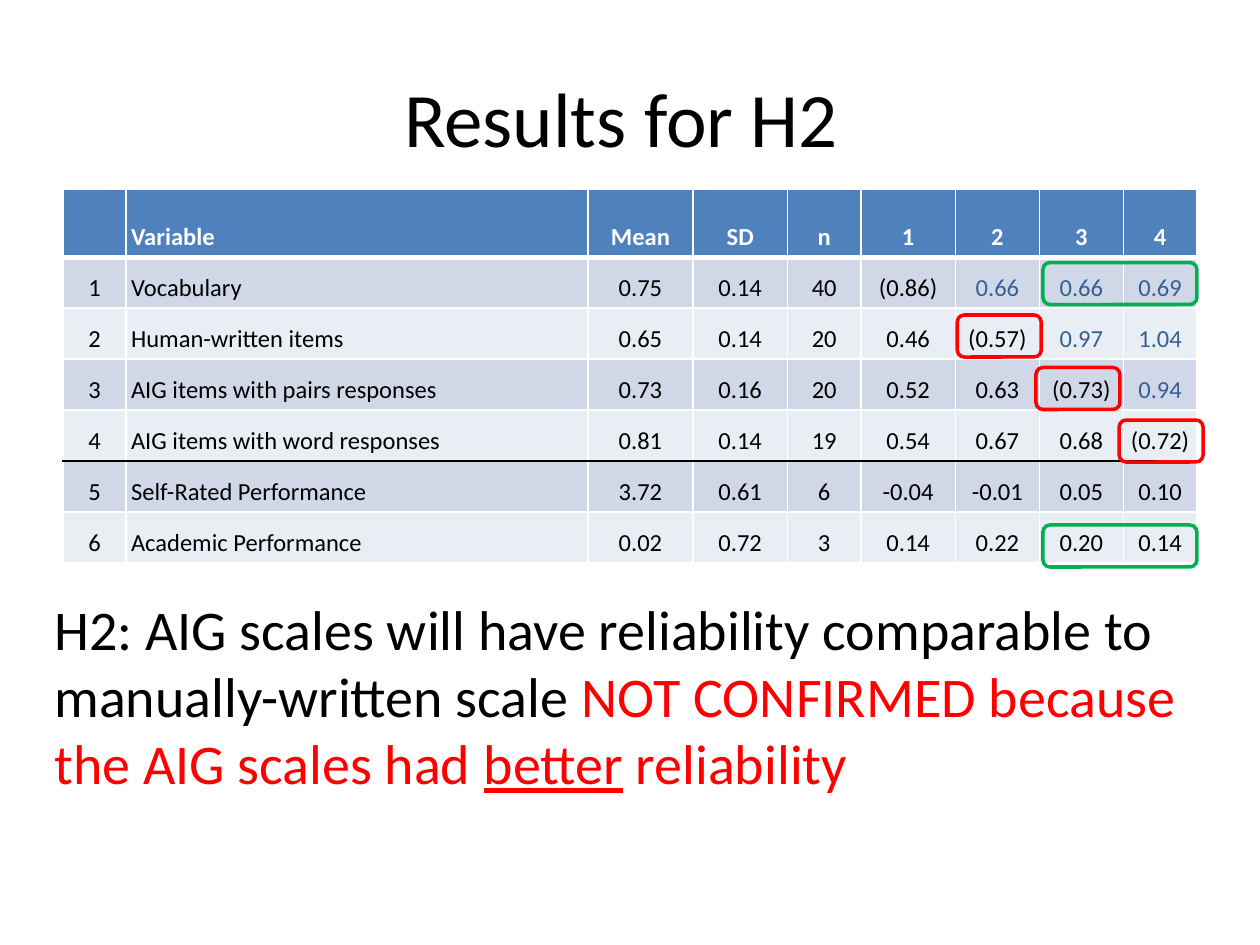
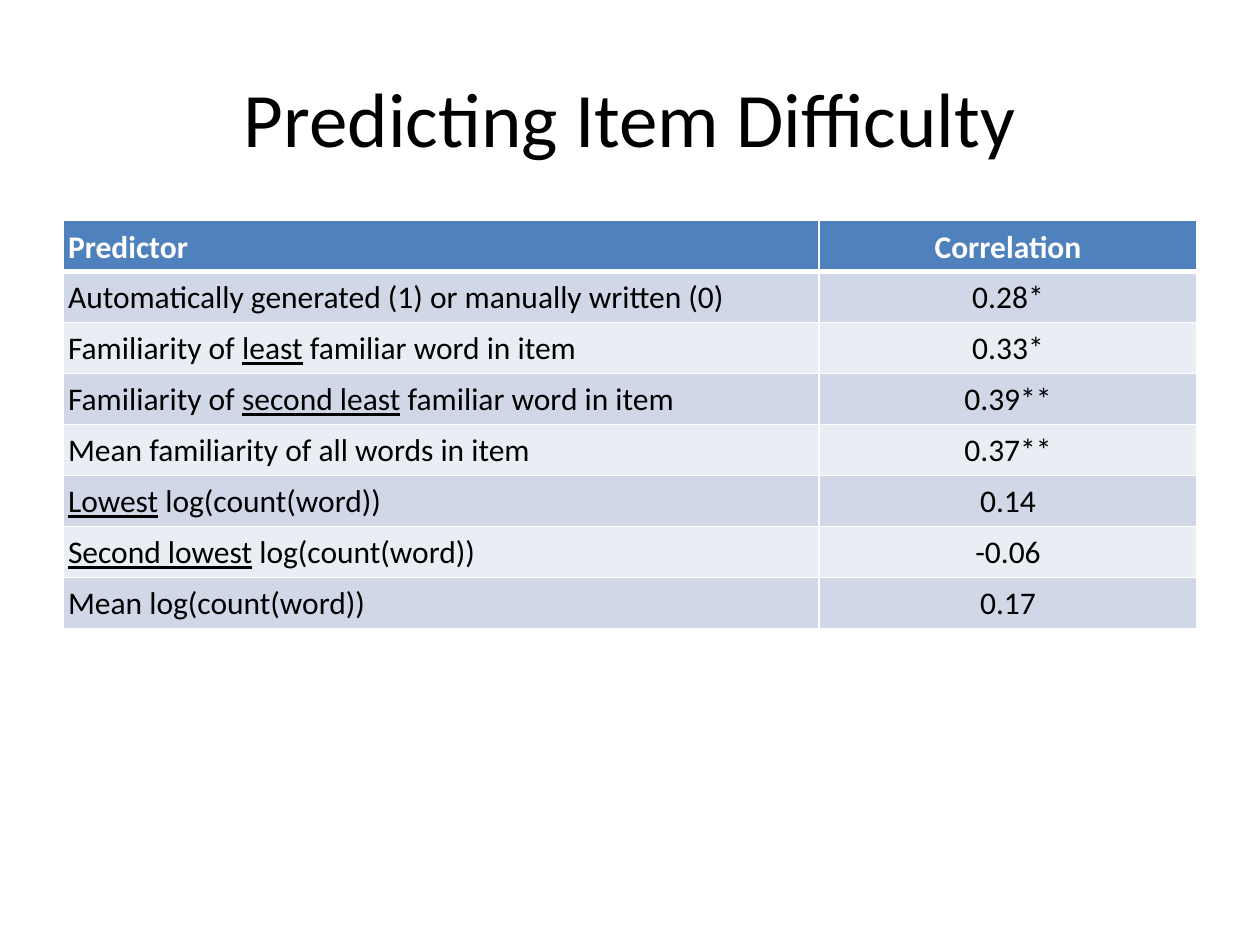
import lxml.etree
import pptx
import pptx.dml.color
import pptx.enum.shapes
import pptx.enum.text
import pptx.oxml.ns
import pptx.util

Pt = pptx.util.Pt
ALIGN = pptx.enum.text.PP_ALIGN
ANCHOR = pptx.enum.text.MSO_ANCHOR

BLACK, WHITE, RED, GREEN = "000000", "FFFFFF", "FF0000", "00B050"
HEADER, BANDS, UPPER_BLUE = "4F81BD", ("E9EDF4", "D0D8E8"), "376092"
FONT = "Calibri"
TABLE_LEFT = 36
ROW_HEIGHT = 29.16


def rgb(colour):
    return pptx.dml.color.RGBColor.from_string(colour)


def set_borders(cell, **sides):
    """Draw cell edges given as L, R, T, B = (colour, width in points)."""
    qn = pptx.oxml.ns.qn
    properties = cell._tc.get_or_add_tcPr()
    for position, side in enumerate("LRTB"):
        colour, width = sides[side]
        line = lxml.etree.Element(qn(f"a:ln{side}"), w=str(Pt(width)))
        fill = lxml.etree.SubElement(line, qn("a:solidFill"))
        lxml.etree.SubElement(fill, qn("a:srgbClr"), val=colour)
        properties.insert(position, line)


class Slides:
    def __init__(self):
        self.deck = pptx.Presentation()
        self.deck.slide_width, self.deck.slide_height = Pt(720), Pt(540)
        self.page = None

    def add_page(self, title):
        self.page = self.deck.slides.add_slide(self.deck.slide_layouts[5])
        box = self.page.shapes.title
        box.left, box.top, box.width, box.height = Pt(36), Pt(21.6), Pt(648), Pt(90)
        box.text_frame.vertical_anchor = ANCHOR.MIDDLE
        self.fill_text(box.text_frame, title, 44, align=ALIGN.CENTER)

    def fill_text(self, frame, content, size, colour=BLACK, bold=False, align=ALIGN.LEFT):
        """Fill a frame with a string or with (text, colour, underline) spans."""
        para = frame.paragraphs[0]
        para.alignment = align
        font = para.font
        font.name, font.size, font.bold = FONT, Pt(size), bold
        font.color.rgb = rgb(colour)
        spans = [(content, None, False)] if isinstance(content, str) else content
        for text, span_colour, underline in spans:
            span = para.add_run()
            span.text = text
            if span_colour:
                span.font.color.rgb = rgb(span_colour)
            if underline:
                span.font.underline = True
        return para

    def text(self, left, top, width, height, content, size):
        box = self.page.shapes.add_textbox(Pt(left), Pt(top), Pt(width), Pt(height))
        box.text_frame.word_wrap = True
        box.text_frame.auto_size = pptx.enum.text.MSO_AUTO_SIZE.SHAPE_TO_FIT_TEXT
        self.fill_text(box.text_frame, content, size)

    def table(self, top, widths, rows, size, header_height=ROW_HEIGHT,
              left_column=0, rule_below=None):
        """Add a banded table; rule_below is the row closed by a black line."""
        heights = [header_height] + [ROW_HEIGHT] * (len(rows) - 1)
        table = self.page.shapes.add_table(
            len(rows), len(widths), Pt(TABLE_LEFT), Pt(top),
            Pt(sum(widths)), Pt(sum(heights))).table
        for column, width in zip(table.columns, widths):
            column.width = Pt(width)
        edges = [(WHITE, 1)] * (len(rows) + 1)
        edges[1] = (WHITE, 3)
        if rule_below is not None:
            edges[rule_below + 1] = (BLACK, 1)
        for r, values in enumerate(rows):
            table.rows[r].height = Pt(heights[r])
            for c, content in enumerate(values):
                cell = table.cell(r, c)
                cell.margin_left = cell.margin_right = Pt(2.9)
                cell.margin_top = cell.margin_bottom = Pt(2.9)
                cell.vertical_anchor = ANCHOR.BOTTOM
                cell.fill.solid()
                cell.fill.fore_color.rgb = rgb(BANDS[r % 2] if r else HEADER)
                set_borders(cell, L=(WHITE, 1), R=(WHITE, 1), T=edges[r], B=edges[r + 1])
                if content:
                    para = self.fill_text(
                        cell.text_frame, content, size, BLACK if r else WHITE, r == 0,
                        ALIGN.LEFT if c == left_column else ALIGN.CENTER)
                    para.space_after = Pt(5.8)

    def highlight(self, left, top, width, colour):
        box = self.page.shapes.add_shape(
            pptx.enum.shapes.MSO_SHAPE.ROUNDED_RECTANGLE,
            Pt(left), Pt(top), Pt(width), Pt(24))
        box.shadow.inherit = False
        box.fill.background()
        box.line.color.rgb = rgb(colour)
        box.line.width = Pt(2)


def build_reliability(slides):
    slides.add_page("Results for H2 ")
    rows = [
        ["", "Variable", "Mean", "SD", "n", "1", "2", "3", "4"],
        ["1", "Vocabulary", "0.75", "0.14", "40", "(0.86)", "0.66", "0.66", "0.69"],
        ["2", "Human-written items", "0.65", "0.14", "20", "0.46", "(0.57)", "0.97", "1.04"],
        ["3", "AIG items with pairs responses", "0.73", "0.16", "20",
         "0.52", "0.63", "(0.73)", "0.94"],
        ["4", "AIG items with word responses", "0.81", "0.14", "19",
         "0.54", "0.67", "0.68", "(0.72)"],
        ["5", "Self-Rated Performance", "3.72", "0.61", "6", "-0.04", "-0.01", "0.05", "0.10"],
        ["6", "Academic Performance", "0.02", "0.72", "3", "0.14", "0.22", "0.20", "0.14"],
    ]
    # Correlations above the diagonal are blue.
    for r in range(1, 4):
        for c in range(r + 5, 9):
            rows[r][c] = [(rows[r][c], UPPER_BLUE, False)]
    slides.table(108, [36, 264, 60, 54, 42, 54, 48, 48, 42], rows, 14,
                 header_height=39, left_column=1, rule_below=4)
    slides.text(24, 336, 660, 145.5, [
        ("H2: AIG scales will have reliability comparable to manually-written scale ",
         None, False),
        ("NOT CONFIRMED because the AIG scales had ", RED, False),
        ("better", RED, True),
        (" reliability", RED, False),
    ], 32)
    for step, left in enumerate((547, 592, 639.5)):
        slides.highlight(left, 180 + 30 * step, 48, RED)
    for top in (150, 300):
        slides.highlight(596, top, 88, GREEN)


def build_predictors(slides):
    slides.add_page("Predicting Item Difficulty")

    def underlined(before, word, after):
        spans = [(before, None, False), (word, None, True), (after, None, False)]
        return [span for span in spans if span[0]]

    familiar, count = " familiar word in item", " log(count(word))"
    slides.table(126, [432, 216], [
        ["Predictor", "Correlation"],
        ["Automatically generated (1) or manually written (0)", "0.28*"],
        [underlined("Familiarity of ", "least", familiar), "0.33*"],
        [underlined("Familiarity of ", "second least", familiar), "0.39**"],
        ["Mean familiarity of all words in item", "0.37**"],
        [underlined("", "Lowest", count), "0.14"],
        [underlined("", "Second lowest", count), "-0.06"],
        ["Mean" + count, "0.17"],
    ], 18)


def main():
    slides = Slides()
    build_reliability(slides)
    build_predictors(slides)
    slides.deck.save("out.pptx")


if __name__ == "__main__":
    main()
